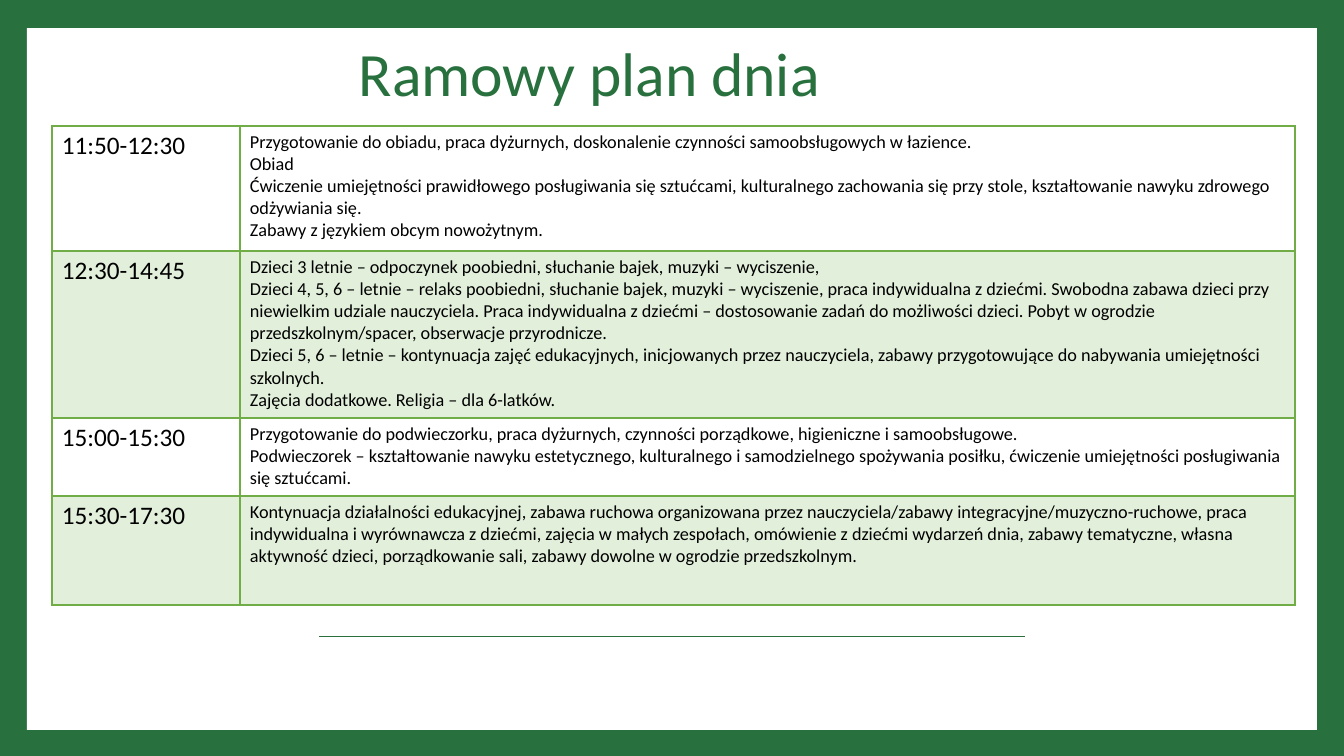
from lxml import etree
from pptx import Presentation
from pptx.dml.color import RGBColor
from pptx.enum.shapes import MSO_CONNECTOR, MSO_SHAPE
from pptx.enum.text import MSO_ANCHOR, PP_ALIGN
from pptx.oxml.ns import qn
from pptx.util import Emu, Pt

RECTANGLE = MSO_SHAPE.RECTANGLE
STRAIGHT = MSO_CONNECTOR.STRAIGHT
TOP = MSO_ANCHOR.TOP
CENTER = PP_ALIGN.CENTER

THEME = {
    "font": "Calibri",
    "green": "28703D",
    "white": "FFFFFF",
    "black": "000000",
    "border": "70AD47",
    "band": "E2EFDA",
    "title_size": 44,
    "time_size": 18,
    "body_size": 13,
}

SCHEDULE = [
    ("11:50-12:30", 125,
     "Przygotowanie do obiadu, praca dyżurnych, doskonalenie czynności samoobsługowych w łazience.\n"
     "Obiad\n"
     "Ćwiczenie umiejętności prawidłowego posługiwania się sztućcami, kulturalnego zachowania się "
     "przy stole, kształtowanie nawyku zdrowego odżywiania się.\n"
     "Zabawy z językiem obcym nowożytnym."),
    ("12:30-14:45", 167,
     "Dzieci 3 letnie – odpoczynek poobiedni, słuchanie bajek, muzyki – wyciszenie,\n"
     "Dzieci 4, 5, 6 – letnie – relaks poobiedni, słuchanie bajek, muzyki – wyciszenie, praca "
     "indywidualna z dziećmi. Swobodna zabawa dzieci przy niewielkim udziale nauczyciela. Praca "
     "indywidualna z dziećmi – dostosowanie zadań do możliwości dzieci. Pobyt w ogrodzie "
     "przedszkolnym/spacer, obserwacje przyrodnicze.\n"
     "Dzieci 5, 6 – letnie – kontynuacja zajęć edukacyjnych, inicjowanych przez nauczyciela, zabawy "
     "przygotowujące do nabywania umiejętności szkolnych.\n"
     "Zajęcia dodatkowe. Religia – dla 6-latków."),
    ("15:00-15:30", 78,
     "Przygotowanie do podwieczorku, praca dyżurnych, czynności porządkowe, higieniczne i "
     "samoobsługowe.\n"
     "Podwieczorek – kształtowanie nawyku estetycznego, kulturalnego i samodzielnego spożywania "
     "posiłku, ćwiczenie umiejętności posługiwania się sztućcami."),
    ("15:30-17:30", 109,
     "Kontynuacja działalności edukacyjnej, zabawa ruchowa organizowana przez nauczyciela/zabawy "
     "integracyjne/muzyczno-ruchowe, praca indywidualna i wyrównawcza z dziećmi, zajęcia w małych "
     "zespołach, omówienie z dziećmi wydarzeń dnia, zabawy tematyczne, własna aktywność dzieci, "
     "porządkowanie sali, zabawy dowolne w ogrodzie przedszkolnym."),
]
COLUMN_WIDTHS = (188, 1055)


def px(length):
    return Emu(round(length * 914400 / 100.8))


def write(paragraph, text, size, color):
    """Fill a paragraph; newlines become line breaks of the same size."""
    paragraph.text = text
    for run in paragraph.runs:
        for name, value in {"name": THEME["font"], "size": Pt(size)}.items():
            setattr(run.font, name, value)
        run.font.color.rgb = RGBColor.from_string(color)
    for line_break in paragraph._p.findall(qn("a:br")):
        etree.SubElement(line_break, qn("a:rPr"), sz=str(size * 100))


presentation = Presentation()
presentation.slide_width, presentation.slide_height = px(1344), px(756)
slide = presentation.slides.add_slide(presentation.slide_layouts[6])

# Green frame around a white panel
for color, box in (("green", (0, 0, 1344, 756)), ("white", (27, 28, 1290, 702))):
    shape = slide.shapes.add_shape(RECTANGLE, *map(px, box))
    shape.shadow.inherit = False
    shape.fill.solid()
    shape.fill.fore_color.rgb = RGBColor.from_string(THEME[color])
    shape.line.fill.background()

# Line under the table
rule = slide.shapes.add_connector(STRAIGHT, px(319), px(636), px(1025), px(636))
rule.line.color.rgb = RGBColor.from_string(THEME["green"])
rule.line.width = Pt(0.5)
etree.SubElement(rule._element.spPr, qn("a:effectLst"))

# Title
title = slide.shapes.add_textbox(px(94), px(43), px(991), px(68))
frame_format = {"word_wrap": True, "vertical_anchor": TOP, "margin_left": 0,
                "margin_right": 0, "margin_top": 0, "margin_bottom": 0}
for name, value in frame_format.items():
    setattr(title.text_frame, name, value)
heading = title.text_frame.paragraphs[0]
heading.alignment = CENTER
heading.line_spacing = 0.9
write(heading, "Ramowy plan dnia", THEME["title_size"], THEME["green"])

# Schedule table
table_height = sum(height for _, height, _ in SCHEDULE)
table = slide.shapes.add_table(len(SCHEDULE), len(COLUMN_WIDTHS), px(52), px(126),
                               px(sum(COLUMN_WIDTHS)), px(table_height)).table
table.first_row = table.horz_banding = False
for column, width in zip(table.columns, COLUMN_WIDTHS):
    column.width = px(width)

cell_format = {"margin_left": px(10), "margin_right": px(10),
               "margin_top": px(5), "margin_bottom": px(5), "vertical_anchor": TOP}
for row, (time, height, activities) in enumerate(SCHEDULE):
    table.rows[row].height = px(height)
    entries = ((time, THEME["time_size"]), (activities, THEME["body_size"]))
    for column, (text, size) in enumerate(entries):
        cell = table.cell(row, column)
        for name, value in cell_format.items():
            setattr(cell, name, value)
        write(cell.text_frame.paragraphs[0], text, size, THEME["black"])
        if row % 2:
            cell.fill.solid()
            cell.fill.fore_color.rgb = RGBColor.from_string(THEME["band"])
        else:
            cell.fill.background()

        # Borders, thicker below the first row
        properties = cell._tc.get_or_add_tcPr()
        for index, side in enumerate(("lnL", "lnR", "lnT", "lnB")):
            thick = (row, side) in ((0, "lnB"), (1, "lnT"))
            border = etree.Element(qn(f"a:{side}"), w=str(Pt(2 if thick else 1)))
            fill = etree.SubElement(border, qn("a:solidFill"))
            etree.SubElement(fill, qn("a:srgbClr"), val=THEME["border"])
            properties.insert(index, border)

presentation.save("out.pptx")
